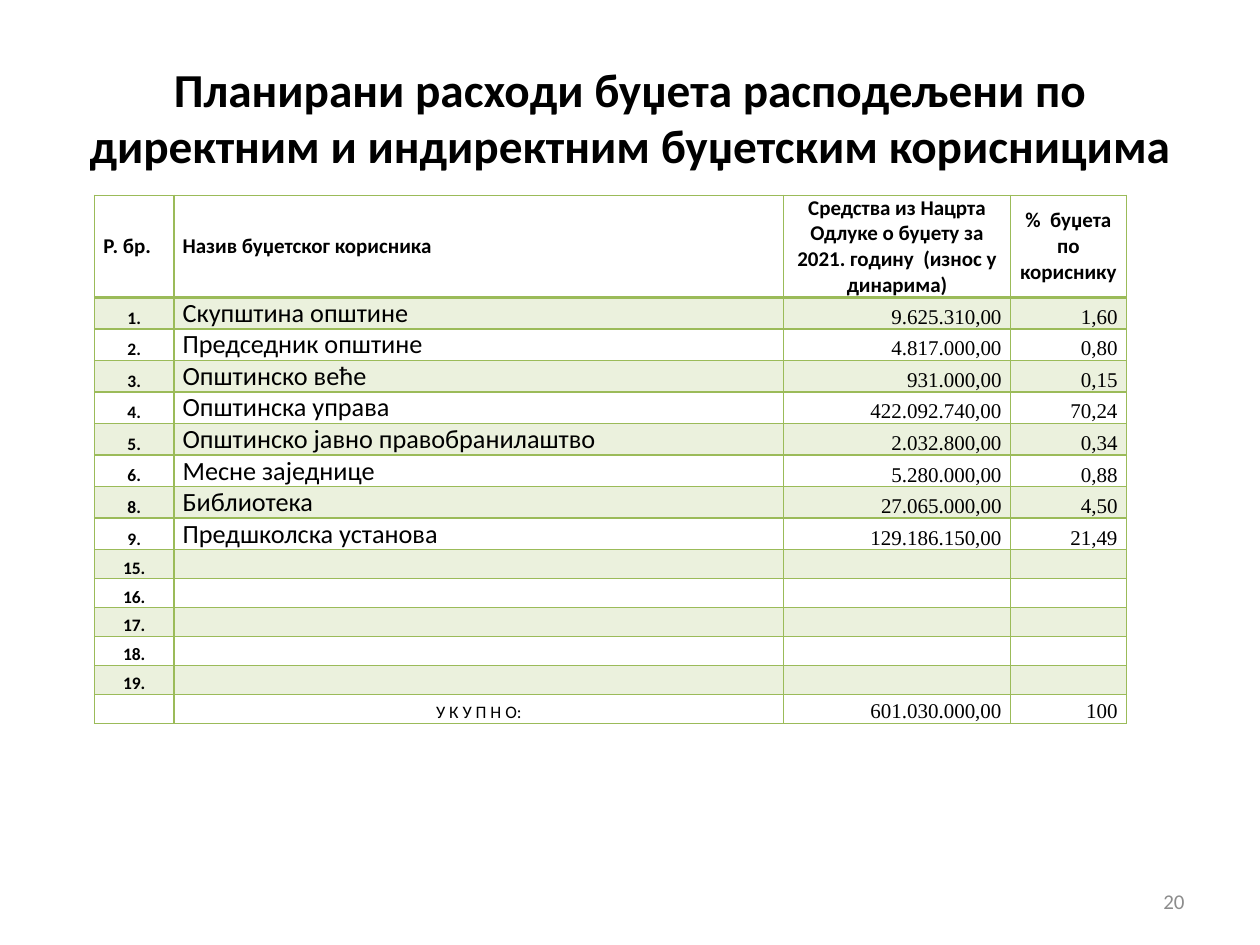
import pptx
import pptx.dml.color
import pptx.enum.text
import pptx.oxml.ns
import pptx.util
import lxml.etree

ALIGN = pptx.enum.text.PP_ALIGN
ANCHOR = pptx.enum.text.MSO_ANCHOR
HEADINGS = (
    "Р. бр.",
    "Назив буџетског корисника",
    "Средства из Нацрта Одлуке о буџету за 2021. годину  (износ у динарима)",
    "%  буџета по кориснику",
)
BENEFICIARIES = [
    ("1.", "Скупштина општине", "9.625.310,00", "1,60"),
    ("2.", "Председник општине", "4.817.000,00", "0,80"),
    ("3.", "Општинско веће", "931.000,00", "0,15"),
    ("4.", "Општинска управа", "422.092.740,00", "70,24"),
    ("5.", "Општинско јавно правобранилаштво", "2.032.800,00", "0,34"),
    ("6.", "Месне заједнице", "5.280.000,00", "0,88"),
    ("8.", "Библиотека", "27.065.000,00", "4,50"),
    ("9.", "Предшколска установа", "129.186.150,00", "21,49"),
]
UNUSED = [(f"{number}.", "", "", "") for number in range(15, 20)]
TOTAL = ("", "У К У П Н О:", "601.030.000,00", "100")


def color(value):
    return pptx.dml.color.RGBColor.from_string(value)


class BudgetPage:
    """Style and current slide, measured on a grid of 40 columns by 30 rows."""

    sans, serif = "Calibri", "Times New Roman"
    ink, muted, green = "000000", "8C8C8C", "9BBB59"

    def __init__(self, deck):
        self.column = deck.slide_width / 40
        self.row = deck.slide_height / 30
        self.page = deck.slides.add_slide(deck.slide_layouts[6])

    def across(self, count):
        return round(count * self.column)

    def down(self, count):
        return round(count * self.row)

    def set_text(self, frame, text, size, font=sans, ink=ink, bold=False, align=ALIGN.LEFT):
        frame.text = text
        para = frame.paragraphs[0]
        para.alignment = align
        for span in para.runs:
            span.font.name = font
            span.font.size = pptx.util.Pt(size)
            span.font.bold = bold
            span.font.color.rgb = color(ink)
        if not text:
            para._p.get_or_add_endParaRPr().set("sz", str(size * 100))

    def text(self, left, top, width, height, text, size, **style):
        box = self.page.shapes.add_textbox(
            self.across(left), self.down(top), self.across(width), self.down(height))
        box.text_frame.word_wrap = True
        box.text_frame.vertical_anchor = ANCHOR.MIDDLE
        self.set_text(box.text_frame, text, size, **style)

    def table(self, left, top, widths, heights):
        table = self.page.shapes.add_table(
            len(heights), len(widths), self.across(left), self.down(top),
            self.across(sum(widths)), self.down(sum(heights))).table
        table.first_row = table.horz_banding = False
        for column, width in zip(table.columns, widths):
            column.width = self.across(width)
        for row, height in zip(table.rows, heights):
            row.height = self.down(height)
        return table

    def borders(self, cell, **points):
        qn = pptx.oxml.ns.qn
        for side in ("L", "R", "T", "B"):
            width = pptx.util.Pt(points.get(side, 1))
            line = lxml.etree.SubElement(
                cell._tc.get_or_add_tcPr(), qn(f"a:ln{side}"), w=str(int(width)))
            fill = lxml.etree.SubElement(line, qn("a:solidFill"))
            lxml.etree.SubElement(fill, qn("a:srgbClr"), val=self.green)

    def shade(self, cell, banded):
        if not banded:
            cell.fill.background()
            return
        cell.fill.solid()
        cell.fill.fore_color.rgb = color(self.green)
        tone = cell._tc.tcPr.find(pptx.oxml.ns.qn("a:solidFill"))[0]
        lxml.etree.SubElement(tone, pptx.oxml.ns.qn("a:alpha"), val="20000")

    def cell(self, cell, text, size, anchor=ANCHOR.BOTTOM, banded=False, edges=None, **style):
        cell.margin_left = cell.margin_right = pptx.util.Inches(0.07)
        cell.margin_top = cell.margin_bottom = 0
        cell.vertical_anchor = anchor
        self.borders(cell, **(edges or {}))
        self.shade(cell, banded)
        self.set_text(cell.text_frame, text, size, **style)


def main():
    deck = pptx.Presentation()
    deck.slide_width = pptx.util.Inches(10)
    deck.slide_height = pptx.util.Inches(7.5)
    page = BudgetPage(deck)
    page.text(2, 1.2, 36, 5,
              "Планирани расходи буџета расподељени по директним "
              "и индиректним буџетским корисницима",
              27, bold=True, align=ALIGN.CENTER)

    heights = [3.24] + [1] * len(BENEFICIARIES) + [0.92] * (len(UNUSED) + 1)
    table = page.table(3, 6.2, (2.52, 19.36, 7.2, 3.68), heights)
    for index, heading in enumerate(HEADINGS):
        page.cell(table.cell(0, index), heading, 12, anchor=ANCHOR.MIDDLE,
                  edges={"B": 2}, bold=True,
                  align=ALIGN.LEFT if index < 2 else ALIGN.CENTER)

    number = dict(size=10, bold=True, align=ALIGN.CENTER)
    name = dict(size=15)
    amount = dict(size=12, font=page.serif, align=ALIGN.RIGHT)
    label = dict(size=10, align=ALIGN.CENTER)
    for row, values in enumerate(BENEFICIARIES + UNUSED + [TOTAL], 1):
        middle = name if row <= len(BENEFICIARIES) else label
        for index, style in enumerate((number, middle, amount, amount)):
            edges = {"T": 2} if row == 1 else None
            page.cell(table.cell(row, index), values[index], edges=edges,
                      banded=row % 2 == 1, **style)

    page.text(28.68, 27.8, 9.32, 1.6, "20", 12, ink=page.muted, align=ALIGN.RIGHT)
    deck.save("out.pptx")


if __name__ == "__main__":
    main()
